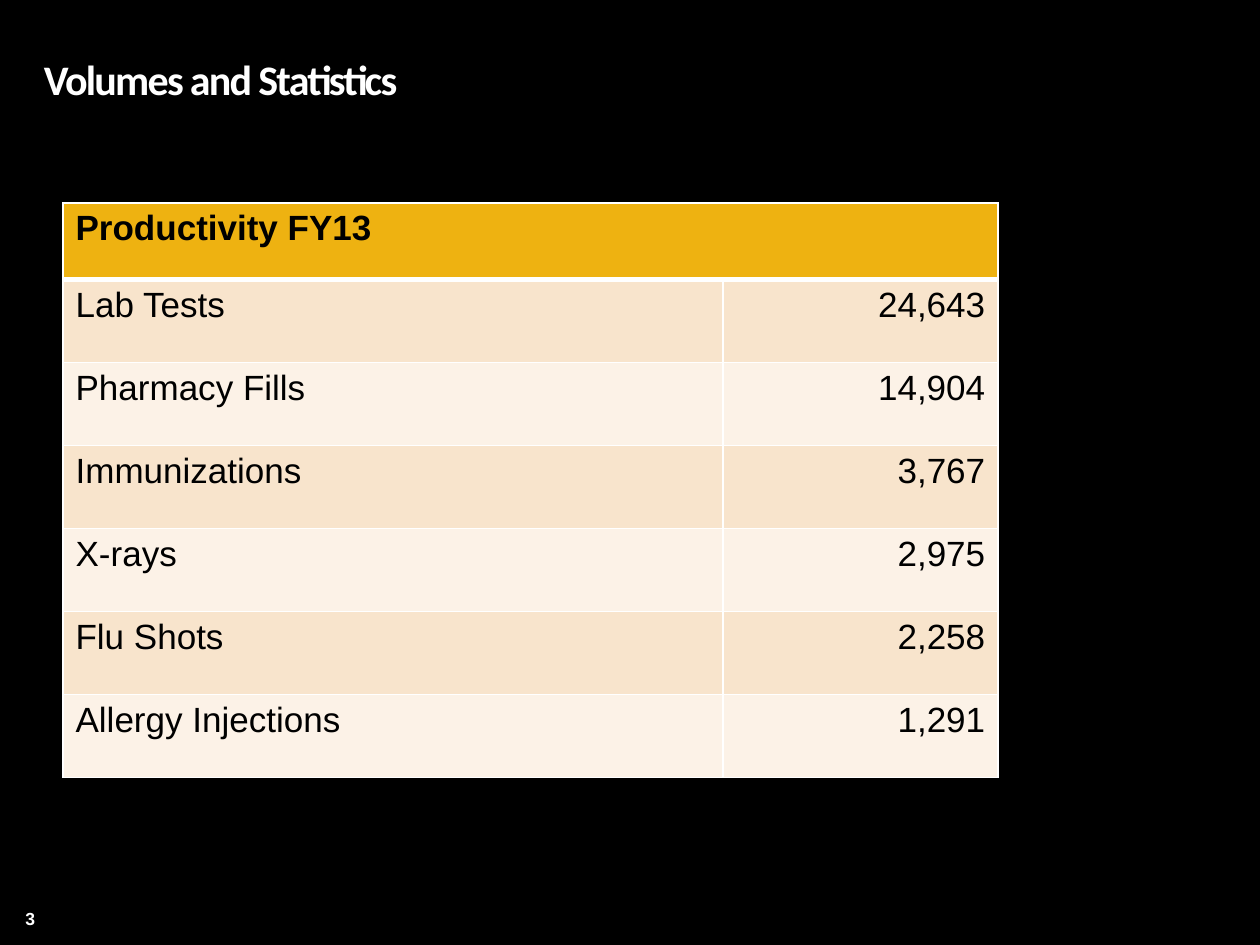
import pptx
import pptx.dml.color
import pptx.enum.text
import pptx.oxml
import pptx.oxml.ns
import pptx.util
from pptx.util import Inches

COLORS = {
    "background": "000000",
    "light_text": "FFFFFF",
    "dark_text": "000000",
    "border": "FFFFFF",
    "header": "EEB211",
    "odd_row": "F8E4CC",
    "even_row": "FCF2E7",
}
ALIGN = pptx.enum.text.PP_ALIGN
ANCHOR = pptx.enum.text.MSO_ANCHOR
PRODUCTIVITY = [
    ("Lab Tests", "24,643"),
    ("Pharmacy Fills", "14,904"),
    ("Immunizations", "3,767"),
    ("X-rays", "2,975"),
    ("Flu Shots", "2,258"),
    ("Allergy Injections", "1,291"),
]


def color(name):
    """Return the named colour as an RGBColor."""
    return pptx.dml.color.RGBColor.from_string(COLORS[name])


def style_paragraph(paragraph, size, font_name, color_name, bold, alignment):
    """Set the font and alignment of a paragraph."""
    paragraph.alignment = alignment
    paragraph.font.size = pptx.util.Pt(size)
    paragraph.font.name = font_name
    paragraph.font.bold = bold
    paragraph.font.color.rgb = color(color_name)


def add_title(slide, left, top, width, height, text):
    """Place the slide title with tightened letter spacing."""
    frame = slide.shapes.add_textbox(left, top, width, height).text_frame
    frame.word_wrap = True
    frame.vertical_anchor = ANCHOR.MIDDLE
    paragraph = frame.paragraphs[0]
    run = paragraph.add_run()
    run.text = text
    run.font._element.set("spc", "-100")
    style_paragraph(paragraph, 24, "Calibri", "light_text", True, ALIGN.LEFT)


def add_slide_number(slide, left, top, width, height, number):
    """Place the slide number in its box."""
    frame = slide.shapes.add_textbox(left, top, width, height).text_frame
    frame.word_wrap = True
    frame.margin_left = frame.margin_right = 0
    frame.text = number
    style_paragraph(frame.paragraphs[0], 10, "Arial", "light_text", True, ALIGN.CENTER)


def add_border(cell, side, points):
    """Draw one side of a cell's border."""
    namespace = pptx.oxml.ns.nsdecls("a")
    cell._tc.get_or_add_tcPr().append(pptx.oxml.parse_xml(
        f'<a:{side} {namespace} w="{pptx.util.Pt(points)}"><a:solidFill>'
        f'<a:srgbClr val="{COLORS["border"]}"/></a:solidFill></a:{side}>'))


def style_cell(cell, row, column):
    """Give a cell its borders, fill and font according to its place."""
    widths = {"lnL": 1, "lnR": 1, "lnT": 3 if row == 1 else 1, "lnB": 3 if row == 0 else 1}
    for side, points in widths.items():
        add_border(cell, side, points)
    fill_name = "header" if row == 0 else "odd_row" if row % 2 else "even_row"
    cell.fill.solid()
    cell.fill.fore_color.rgb = color(fill_name)
    alignment = ALIGN.RIGHT if column == 1 else ALIGN.LEFT
    style_paragraph(cell.text_frame.paragraphs[0], 20, "Arial", "dark_text", row == 0, alignment)


def add_productivity_table(slide, left, top, width, height, heading, records):
    """Place the table with a merged heading above the records."""
    rows = [(heading, "")] + records
    table = slide.shapes.add_table(len(rows), 2, left, top, width, height).table
    table.columns[0].width = Inches(5.24)
    table.columns[1].width = width - Inches(5.24)
    header_height = Inches(0.61)
    record_height = (height - header_height) // len(records)
    for row, values in enumerate(rows):
        table.rows[row].height = record_height if row else header_height
        for column, value in enumerate(values):
            cell = table.cell(row, column)
            cell.text = value
            style_cell(cell, row, column)
    table.cell(0, 0).merge(table.cell(0, 1))


def main():
    """Build the statistics slide and save it."""
    presentation = pptx.Presentation()
    presentation.slide_width = Inches(10)
    presentation.slide_height = Inches(7.5)
    slide = presentation.slides.add_slide(presentation.slide_layouts[6])
    slide.background.fill.solid()
    slide.background.fill.fore_color.rgb = color("background")
    add_slide_number(slide, Inches(0.02), Inches(7.16), Inches(0.44), Inches(0.27), "3")
    add_title(slide, Inches(0.25), Inches(0.25), Inches(9.08), Inches(0.75),
              "Volumes and Statistics")
    add_productivity_table(slide, Inches(0.5), Inches(1.61), Inches(7.42), Inches(4.56),
                           "Productivity FY13", PRODUCTIVITY)
    presentation.save("out.pptx")


if __name__ == "__main__":
    main()
